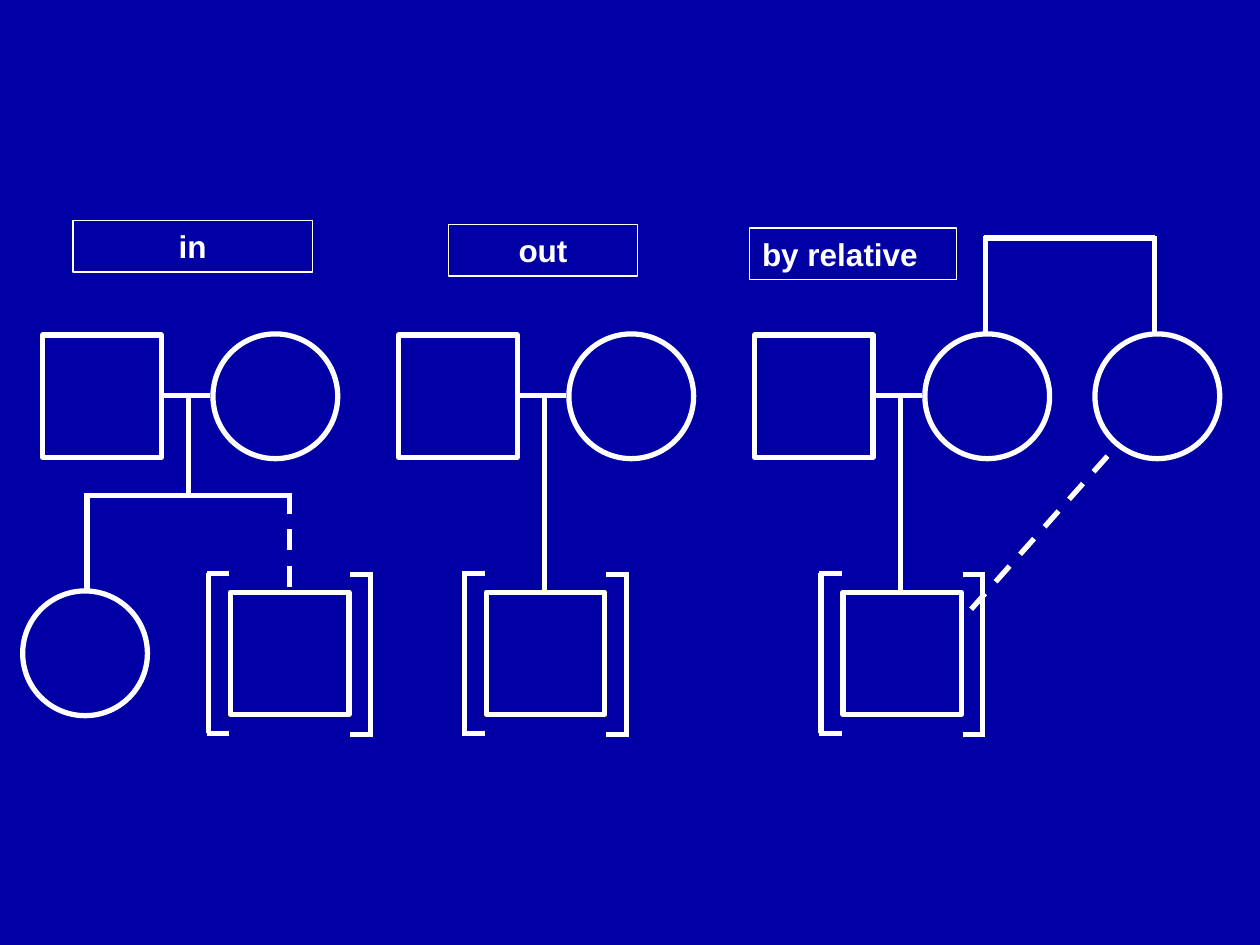
"""Build a slide of three pedigree diagrams for adoption in, out and by a relative."""
from lxml import etree
from pptx import Presentation
from pptx.dml.color import RGBColor
from pptx.enum.dml import MSO_LINE
from pptx.enum.shapes import MSO_CONNECTOR, MSO_SHAPE
from pptx.enum.text import MSO_ANCHOR, PP_ALIGN
from pptx.oxml.ns import qn
from pptx.util import Inches, Pt

STRAIGHT = MSO_CONNECTOR.STRAIGHT
DASH = MSO_LINE.DASH
MALE, FEMALE = MSO_SHAPE.RECTANGLE, MSO_SHAPE.OVAL
LEFT, CENTER = PP_ALIGN.LEFT, PP_ALIGN.CENTER
MIDDLE = MSO_ANCHOR.MIDDLE

THEME = {
    "background": RGBColor(0x00, 0x00, 0xA4),
    "ink": RGBColor(0xFF, 0xFF, 0xFF),
    "font": "Arial",
    "label_size": Pt(18),
    "stroke": Pt(3),
    "frame": Pt(0.75),
}
SIZES = {MALE: (0.94, 0.97), FEMALE: (0.99, 0.99)}

deck = Presentation()
deck.slide_width, deck.slide_height = Inches(10), Inches(7.5)
COLUMN, ROW = deck.slide_width / 10, deck.slide_height / 7.5
slide = deck.slides.add_slide(deck.slide_layouts[6])
slide.background.fill.solid()
slide.background.fill.fore_color.rgb = THEME["background"]


def draw_person(sex, column, row):
    width, height = SIZES[sex]
    person = slide.shapes.add_shape(
        sex, int(column * COLUMN), int(row * ROW), int(width * COLUMN), int(height * ROW)
    )
    person.shadow.inherit = False
    person.fill.background()
    person.line.color.rgb = THEME["ink"]
    person.line.width = THEME["stroke"]


def draw_line(shapes, x1, y1, x2, y2, dash=None):
    link = shapes.add_connector(
        STRAIGHT, int(x1 * COLUMN), int(y1 * ROW), int(x2 * COLUMN), int(y2 * ROW)
    )
    link.line.color.rgb = THEME["ink"]
    link.line.width = THEME["stroke"]
    if dash:
        link.line.dash_style = dash
    etree.SubElement(link._element.spPr, qn("a:effectLst"))


FAMILY_PITCH = 2.825
PARENT_ROW, MARRIAGE_ROW, SIBLING_ROW, CHILD_ROW = 2.66, 3.14, 3.93, 4.69
descent_ends = [SIBLING_ROW, CHILD_ROW, CHILD_ROW]
child_columns = [1.83, 3.86, 6.69]

for family, (descent_end, child) in enumerate(zip(descent_ends, child_columns)):
    father = 0.34 + family * FAMILY_PITCH
    draw_person(MALE, father, PARENT_ROW)
    draw_person(FEMALE, father + 1.35, PARENT_ROW - 0.01)
    draw_line(slide.shapes, father + 0.95, MARRIAGE_ROW, father + 1.33, MARRIAGE_ROW)
    draw_line(slide.shapes, father + 1.155, MARRIAGE_ROW, father + 1.155, descent_end)

    draw_person(MALE, child, CHILD_ROW + 0.01)
    for inner, spine, outer, top in [(0.95, 1.11, 1.13, 4.56), (-0.01, -0.175, -0.19, 4.55)]:
        bracket = slide.shapes.add_group_shape().shapes
        bottom = top + 1.27
        draw_line(bracket, child + inner, top, child + outer, top)
        draw_line(bracket, child + spine, top, child + spine, bottom)
        draw_line(bracket, child + inner, bottom, child + outer, bottom)

draw_person(FEMALE, 0.18, CHILD_ROW)
draw_line(slide.shapes, 0.68, SIBLING_ROW, 2.32, SIBLING_ROW)
draw_line(slide.shapes, 0.69, 3.91, 0.69, 4.7)
draw_line(slide.shapes, 2.3, 3.91, 2.3, 4.7, DASH)

draw_person(FEMALE, 8.69, PARENT_ROW - 0.01)
draw_line(slide.shapes, 7.81, 1.89, 9.17, 1.89)
for sister in (7.82, 9.16):
    draw_line(slide.shapes, sister, 1.87, sister, PARENT_ROW)
draw_line(slide.shapes, 8.79, 3.62, 7.65, 4.9, DASH)

labels = [
    ("in", 0.58, 1.75, 1.9, CENTER),
    ("out", 3.56, 1.78, 1.5, CENTER),
    ("by relative", 5.95, 1.81, 1.64, LEFT),
]
for wording, column, row, width, alignment in labels:
    label = slide.shapes.add_textbox(
        int(column * COLUMN), int(row * ROW), int(width * COLUMN), int(0.41 * ROW)
    )
    label.line.color.rgb = THEME["ink"]
    label.line.width = THEME["frame"]
    label.text_frame.word_wrap = True
    label.text_frame.vertical_anchor = MIDDLE
    label.text_frame.text = wording
    paragraph = label.text_frame.paragraphs[0]
    paragraph.alignment = alignment
    font = paragraph.runs[0].font
    font.name, font.size, font.bold = THEME["font"], THEME["label_size"], True
    font.color.rgb = THEME["ink"]

deck.save("out.pptx")
